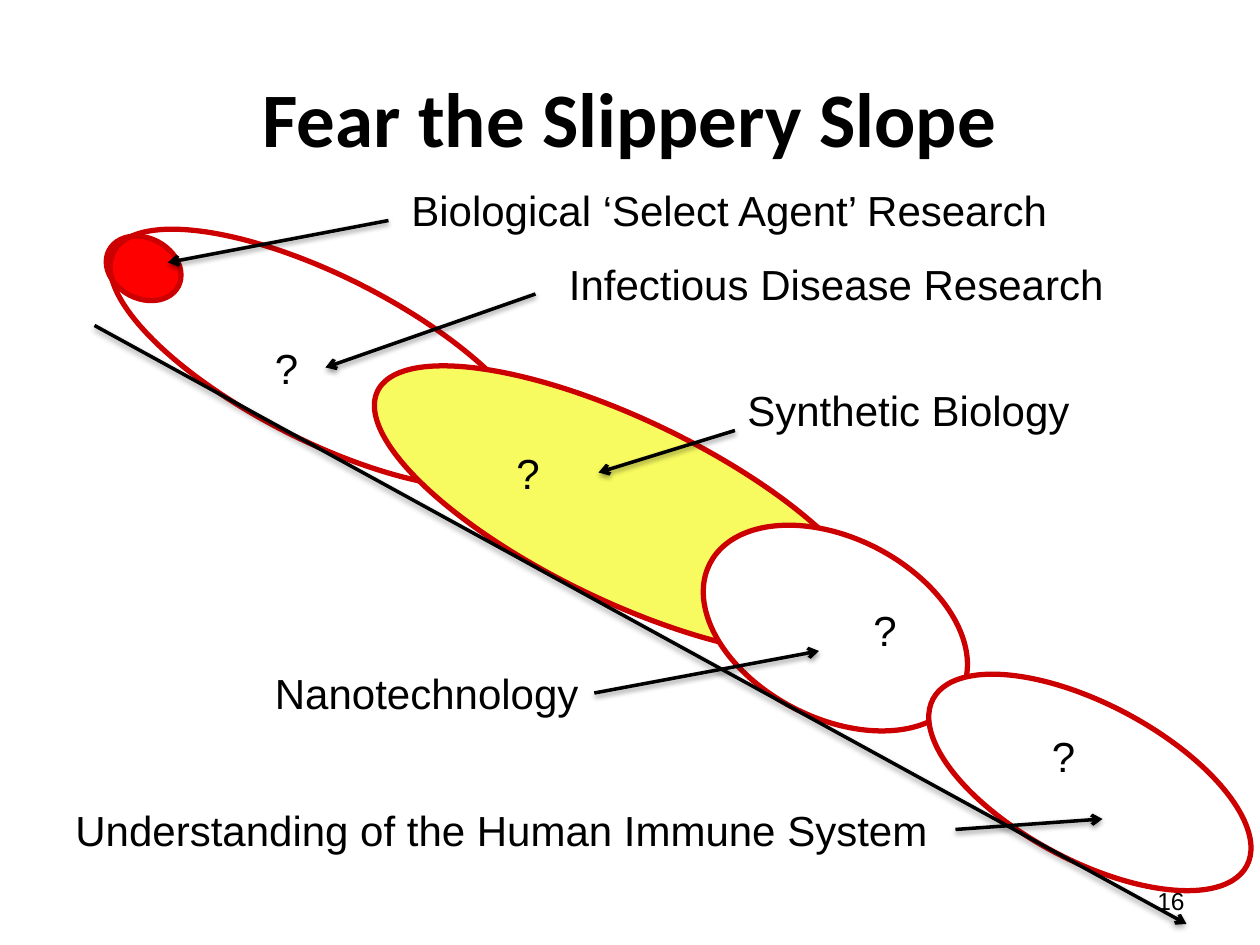
import dataclasses

import lxml.etree
import pptx
import pptx.dml.color
import pptx.enum.shapes
import pptx.enum.text
import pptx.oxml
import pptx.oxml.ns
import pptx.util

ALIGN = pptx.enum.text.PP_ALIGN
ANCHOR = pptx.enum.text.MSO_ANCHOR
CELLS_PER_INCH = 12
LABEL_HEIGHT = 6.12


@dataclasses.dataclass(frozen=True)
class Theme:
    """Colours, fonts and sizes in points."""

    ink: str = "000000"
    outline: str = "CC0000"
    agent: str = "FF0000"
    synthetic: str = "F7FB5F"
    paper: str = "FFFFFF"
    title_font: str = "Calibri"
    body_font: str = "Arial"
    title_size: int = 44
    label_size: int = 24
    number_size: int = 14
    outline_width: int = 3
    arrow_width: int = 2
    shadow_blur: float = 3.1
    shadow_distance: float = 1.6
    shadow_opacity: int = 38


THEME = Theme()


def cells(*counts):
    """Convert counts of grid cells to lengths."""
    return [pptx.util.Inches(count / CELLS_PER_INCH) for count in counts]


def color(code):
    """Return the colour for a hexadecimal code."""
    return pptx.dml.color.RGBColor.from_string(code)


def add_text(slide, text, box, size=THEME.label_size, font=THEME.body_font,
             bold=False, align=ALIGN.LEFT, anchor=ANCHOR.TOP, wrap=False):
    """Add a one-paragraph text box."""
    frame = slide.shapes.add_textbox(*cells(*box)).text_frame
    frame.word_wrap = wrap
    frame.vertical_anchor = anchor
    paragraph = frame.paragraphs[0]
    paragraph.text = text
    paragraph.alignment = align
    paragraph.font.name = font
    paragraph.font.size = pptx.util.Pt(size)
    paragraph.font.bold = bold
    paragraph.font.color.rgb = color(THEME.ink)


def add_ellipse(slide, box, rotation, fill=None):
    """Add a tilted, outlined ellipse."""
    shape = slide.shapes.add_shape(pptx.enum.shapes.MSO_SHAPE.OVAL, *cells(*box))
    shape.rotation = rotation
    shape.shadow.inherit = False
    shape.line.color.rgb = color(THEME.outline)
    shape.line.width = pptx.util.Pt(THEME.outline_width)
    if fill:
        shape.fill.solid()
        shape.fill.fore_color.rgb = color(fill)
    else:
        shape.fill.background()


def add_arrow(slide, start, end):
    """Add a straight arrow with a soft shadow below it."""
    connector = slide.shapes.add_connector(
        pptx.enum.shapes.MSO_CONNECTOR.STRAIGHT, *cells(*start, *end))
    connector.line.color.rgb = color(THEME.ink)
    connector.line.width = pptx.util.Pt(THEME.arrow_width)
    properties = connector._element.spPr
    name = pptx.oxml.ns.qn
    outline = properties.find(name("a:ln"))
    lxml.etree.SubElement(outline, name("a:tailEnd"), type="arrow")
    effects = lxml.etree.SubElement(properties, name("a:effectLst"))
    shadow = lxml.etree.SubElement(
        effects, name("a:outerShdw"),
        blurRad=str(pptx.util.Pt(THEME.shadow_blur)),
        dist=str(pptx.util.Pt(THEME.shadow_distance)),
        dir=str(90 * 60000), rotWithShape="0")
    tint = lxml.etree.SubElement(shadow, name("a:srgbClr"), val=THEME.ink)
    lxml.etree.SubElement(tint, name("a:alpha"), val=str(THEME.shadow_opacity * 1000))


def main():
    """Build and save the slide."""
    presentation = pptx.Presentation()
    presentation.slide_width, presentation.slide_height = cells(120, 90)
    slide = presentation.slides.add_slide(presentation.slide_layouts[6])

    add_text(slide, "Fear the Slippery Slope", (6, 3.6, 108, 15), THEME.title_size,
             THEME.title_font, True, ALIGN.CENTER, ANCHOR.MIDDLE, True)
    add_text(slide, "16", (86, 83.4, 28, 4.8), THEME.number_size,
             align=ALIGN.RIGHT, anchor=ANCHOR.MIDDLE, wrap=True)

    fields = [
        ((10.8, 21.84, 5.76, 7.44), 297.2, THEME.agent),
        ((8.4, 26.28, 44.88, 15.72), 26.8, None),
        ((33.36, 39.96, 52.32, 17.28), 205.7, THEME.synthetic),
        ((66.12, 51.24, 26.88, 17.16), 27.2, THEME.paper),
        ((86.88, 67.08, 33.84, 14.88), 208, THEME.paper),
    ]
    for box, rotation, fill in fields:
        add_ellipse(slide, box, rotation, fill)

    add_arrow(slide, (9, 31), (113, 88))

    labels = [
        ("Biological ‘Select Agent’ Research", 38, 17, 63.7),
        ("Infectious Disease Research", 53, 24, 53.9),
        ("Synthetic Biology", 70, 36, 33.5),
        ("Nanotechnology", 25, 63, 31.7),
        ("Understanding of the Human Immune System", 6, 76, 84.4),
    ]
    for text, column, row, width in labels:
        add_text(slide, text, (column, row, width, LABEL_HEIGHT))

    pointers = [
        ((37, 21), (16, 25)),
        ((51, 28), (31, 35)),
        ((70, 41), (57, 45)),
        ((56.6, 66), (78, 62)),
        ((91, 79), (105, 78)),
    ]
    for start, end in pointers:
        add_arrow(slide, start, end)

    for column, row in [(48, 42), (82, 57), (99, 69), (25, 32)]:
        add_text(slide, "?", (column, row, 4.7, LABEL_HEIGHT))

    presentation.save("out.pptx")


if __name__ == "__main__":
    main()
